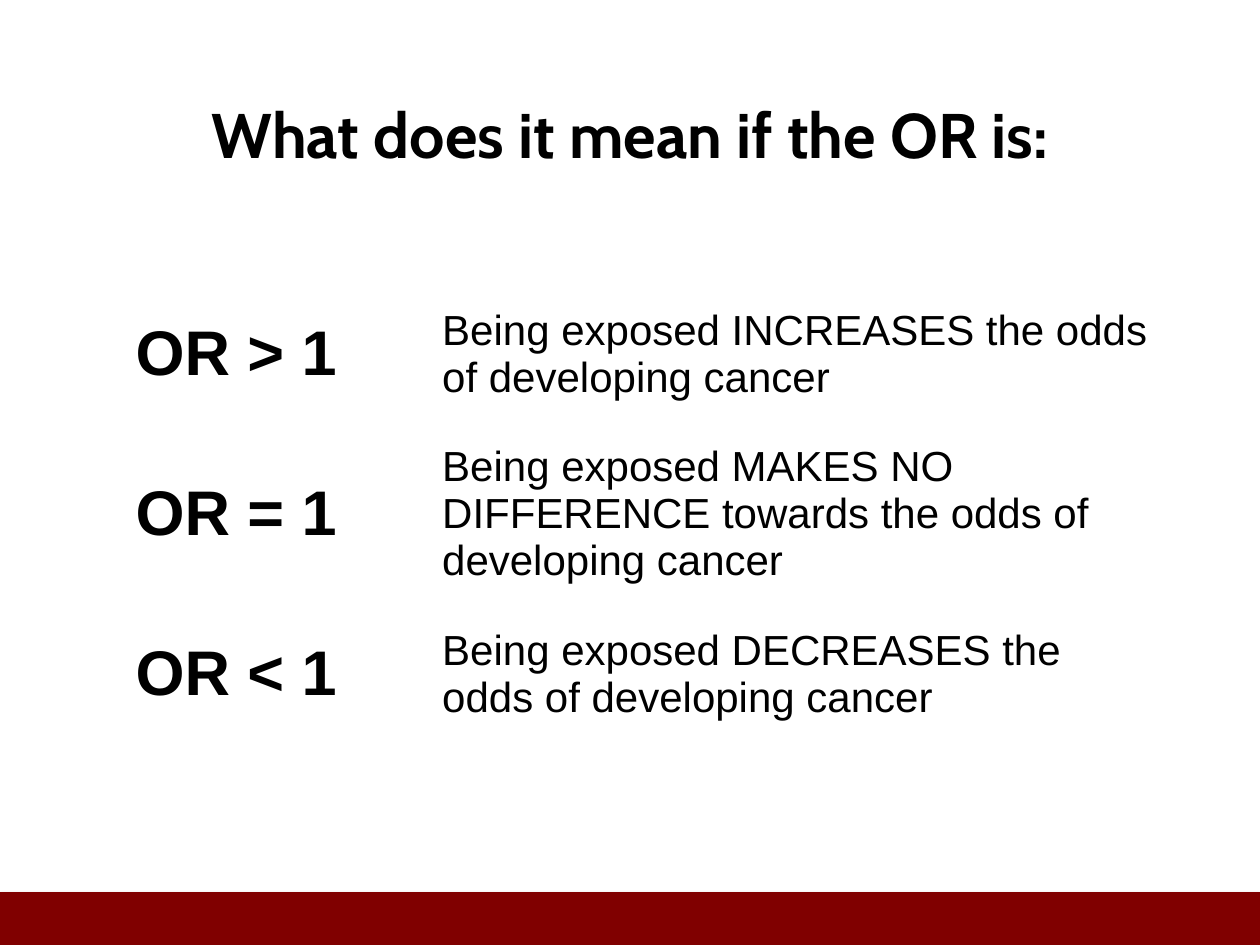
"""Build a slide that explains how to read an odds ratio."""
from lxml import etree
from pptx import Presentation
from pptx.dml.color import RGBColor
from pptx.enum.shapes import MSO_SHAPE
from pptx.enum.text import MSO_ANCHOR, PP_ALIGN
from pptx.oxml import parse_xml
from pptx.oxml.ns import qn
from pptx.util import Inches, Pt

RECTANGLE = MSO_SHAPE.RECTANGLE
MIDDLE = MSO_ANCHOR.MIDDLE
LEFT, CENTER = PP_ALIGN.LEFT, PP_ALIGN.CENTER
NAMESPACE = "http://schemas.openxmlformats.org/drawingml/2006/main"
MEANINGS = [
    ("OR > 1", "Being exposed INCREASES the odds of developing cancer"),
    ("OR = 1", "Being exposed MAKES NO DIFFERENCE towards the odds of developing cancer"),
    ("OR < 1", "Being exposed DECREASES the odds of developing cancer"),
]


def color(value):
    return RGBColor.from_string(value)


def write(text_frame, text, size=24, font="Arial", bold=False, align=LEFT):
    text_frame.word_wrap = True
    paragraph = text_frame.paragraphs[0]
    paragraph.alignment = align
    run = paragraph.add_run()
    run.text = text
    run.font.size = Pt(size)
    run.font.name = font
    run.font.bold = bold
    run.font.color.rgb = color("000000")


presentation = Presentation()
presentation.slide_width = Inches(10)
presentation.slide_height = Inches(7.5)
slide = presentation.slides.add_slide(presentation.slide_layouts[6])
slide.background.fill.solid()
slide.background.fill.fore_color.rgb = color("FFFFFF")

footer = slide.shapes.add_shape(RECTANGLE, Inches(0), Inches(7.08), Inches(10), Inches(0.42))
footer.fill.solid()
footer.fill.fore_color.rgb = color("800000")
footer.line.fill.background()
footer.shadow.inherit = False
footer._element.spPr.find(qn("a:effectLst")).append(parse_xml(
    f'<a:outerShdw xmlns:a="{NAMESPACE}" blurRad="{Pt(3.1)}" dist="{Pt(1.8)}" '
    'dir="5400000" rotWithShape="0"><a:srgbClr val="000000">'
    '<a:alpha val="35000"/></a:srgbClr></a:outerShdw>'))

title = slide.shapes.add_textbox(Inches(0.5), Inches(0.43), Inches(9), Inches(1.25))
title.text_frame.vertical_anchor = MIDDLE
write(title.text_frame, "What does it mean if the OR is:", size=36, font="Cabin",
      bold=True, align=CENTER)

table = slide.shapes.add_table(len(MEANINGS), 2, Inches(0.34), Inches(2.19),
                               Inches(8.94), Inches(3.72)).table
table.first_row = False
table.horz_banding = False
for column, width in zip(table.columns, (3.07, 5.87)):
    column.width = Inches(width)

for row_index, (ratio, meaning) in enumerate(MEANINGS):
    table.rows[row_index].height = Inches(1.24)
    ratio_cell, meaning_cell = table.rows[row_index].cells
    write(ratio_cell.text_frame, ratio, size=36, bold=True, align=CENTER)
    write(meaning_cell.text_frame, meaning)
    for cell in (ratio_cell, meaning_cell):
        cell.vertical_anchor = MIDDLE
        cell.fill.background()
        properties = cell._tc.get_or_add_tcPr()
        for position, side in enumerate(("lnL", "lnR", "lnT", "lnB")):
            thick = (row_index, side) in ((0, "lnB"), (1, "lnT"))
            border = etree.Element(qn(f"a:{side}"), w=str(Pt(3 if thick else 1)))
            fill = etree.SubElement(border, qn("a:solidFill"))
            etree.SubElement(fill, qn("a:srgbClr"), val="FFFFFF")
            properties.insert(position, border)

presentation.save("out.pptx")
